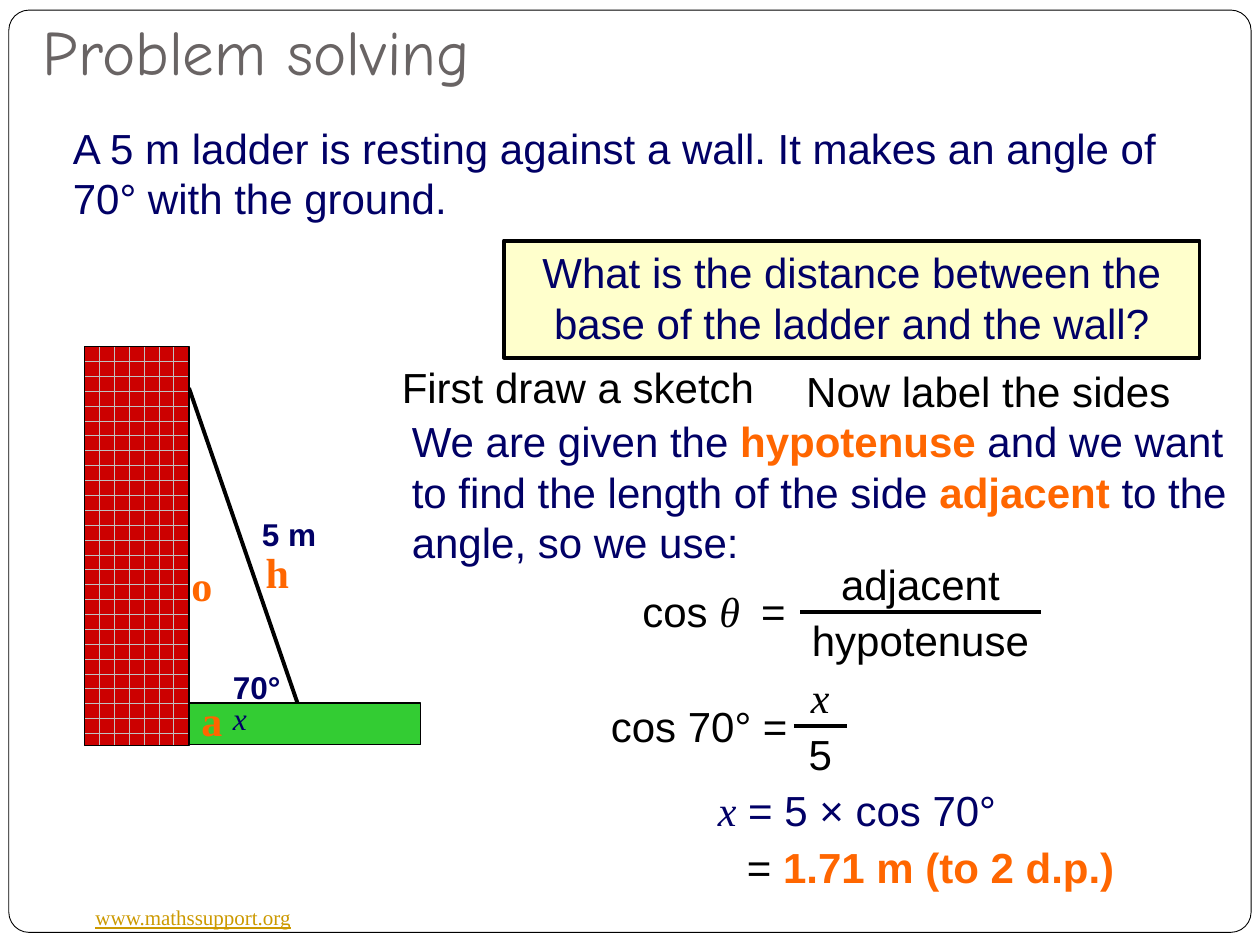
from lxml import etree
from pptx import Presentation
from pptx.dml.color import RGBColor
from pptx.enum import dml, shapes, text
from pptx.oxml import ns
from pptx.util import Inches, Pt

COLOURS = {
    "black": "000000", "white": "FFFFFF", "navy": "010066", "orange": "FF6600",
    "grey": "696464", "gold": "CC9900", "cream": "FFFFCC", "grass": "33CC33",
    "mortar": "C0C0C0", "brick": "CC0000",
}
SANS, SERIF, TITLE = "Arial", "Times New Roman", "Comic Neue"


def colour(name):
    return RGBColor.from_string(COLOURS[name])


def add_run(paragraph, words, size=24, font=SANS, color="black",
            bold=False, italic=False, underline=False):
    run = paragraph.add_run()
    run.text = words
    style = run.font
    style.size, style.name = Pt(size), font
    style.bold, style.italic, style.underline = bold, italic, underline
    style.color.rgb = colour(color)


class SlideBuilder:
    """Holds the current slide and the shared text style."""

    def __init__(self, slide):
        self.slide = slide

    def fill_text(self, frame, runs, align=text.PP_ALIGN.LEFT, wrap=True, **style):
        """Runs are a string, or (words, overrides) pairs on top of the style."""
        frame.word_wrap = wrap
        paragraph = frame.paragraphs[0]
        paragraph.alignment = align
        pairs = [(runs, {})] if isinstance(runs, str) else runs
        for words, overrides in pairs:
            add_run(paragraph, words, **{**style, **overrides})

    def title(self, words, left, top, width, height):
        title = self.slide.shapes.title
        title.left, title.top = Inches(left), Inches(top)
        title.width, title.height = Inches(width), Inches(height)
        frame = title.text_frame
        frame.vertical_anchor = text.MSO_ANCHOR.BOTTOM
        frame.margin_bottom = Inches(0.1)
        self.fill_text(frame, words, size=36, font=TITLE, color="grey")

    def label(self, runs, left, top, width, height=0.5, parent=None, **style):
        box = (parent or self.slide).shapes.add_textbox(
            Inches(left), Inches(top), Inches(width), Inches(height))
        box.text_frame.auto_size = text.MSO_AUTO_SIZE.SHAPE_TO_FIT_TEXT
        self.fill_text(box.text_frame, runs, **style)

    def box(self, left, top, width, height, fill=None, line=0.75,
            kind=shapes.MSO_SHAPE.RECTANGLE):
        box = self.slide.shapes.add_shape(
            kind, Inches(left), Inches(top), Inches(width), Inches(height))
        box.shadow.inherit = False
        if fill:
            box.fill.solid()
            box.fill.fore_color.rgb = colour(fill)
        box.line.color.rgb = colour("black")
        box.line.width = Pt(line)
        return box

    def line(self, x1, y1, x2, y2, parent=None):
        line = (parent or self.slide).shapes.add_connector(
            shapes.MSO_CONNECTOR.STRAIGHT,
            Inches(x1), Inches(y1), Inches(x2), Inches(y2))
        line.line.color.rgb = colour("black")
        line.line.width = Pt(2.25)
        etree.SubElement(line._element.spPr, ns.qn("a:effectLst"))

    def fraction(self, numerator, denominator, left, bar_y, width):
        """Both terms are centred on the bar, in boxes a little wider than it."""
        group = self.slide.shapes.add_group_shape()
        overhang = 0.15
        place = dict(parent=group, align=text.PP_ALIGN.CENTER)
        term_left, term_width = left - overhang, width + 2 * overhang
        self.label(numerator, term_left, bar_y - 0.48, term_width, **place)
        self.line(left, bar_y, left + width, bar_y, parent=group)
        self.label(denominator, term_left, bar_y - 0.03, term_width, **place)


def main():
    prs = Presentation()
    prs.slide_width, prs.slide_height = Inches(10), Inches(7.5)
    page = SlideBuilder(prs.slides.add_slide(prs.slide_layouts[5]))
    math_italic = dict(font=SERIF, italic=True)
    key_word = dict(color="orange", bold=True)

    # Page frame and footer
    frame = page.box(0.07, 0.08, 9.86, 7.32, "white", 0.5,
                     shapes.MSO_SHAPE.ROUNDED_RECTANGLE)
    frame.adjustments[0] = 0.022
    tree = page.slide.shapes._spTree
    tree.remove(frame._element)
    tree.insert(2, frame._element)  # behind the title
    page.label("www.mathssupport.org", 0.66, 7.13, 1.77, 0.3, wrap=False,
               size=12, font=SERIF, color="gold", underline=True)

    # Problem and question
    page.title("Problem solving", 0.24, 0.1, 9, 0.7)
    page.label("A 5 m ladder is resting against a wall. It makes an angle of "
               "70° with the ground.", 0.48, 0.92, 8.85, 0.9, color="navy")
    question = page.box(4, 1.91, 5.52, 0.93, "cream", 2.25)
    question.text_frame.vertical_anchor = text.MSO_ANCHOR.TOP
    page.fill_text(question.text_frame,
                   "What is the distance between the base of the ladder and the wall?",
                   align=text.PP_ALIGN.CENTER, color="navy")

    # Sketch: ladder, ground, wall
    page.line(1.5, 3.08, 2.42, 5.75)
    page.box(1.42, 5.58, 1.92, 0.33, "grass")
    wall = page.box(0.67, 2.75, 0.83, 3.17)
    wall.fill.patterned()
    wall.fill.pattern = dml.MSO_PATTERN.HORIZONTAL_BRICK
    wall.fill.fore_color.rgb = colour("mortar")
    wall.fill.back_color.rgb = colour("brick")

    # Measurements and side names
    for measure, left, top, width, style in (
            ("5 m", 1.98, 4.04, 0.63, dict(bold=True)),
            ("70°", 1.75, 5.25, 0.58, dict(bold=True)),
            ("x", 1.75, 5.5, 0.31, math_italic)):
        page.label(measure, left, top, width, 0.4, wrap=False,
                   size=18, color="navy", **style)
    for side, left, top in (("h", 2.01, 4.29), ("o", 1.42, 4.39), ("a", 1.5, 5.46)):
        page.label(side, left, top, 0.4, wrap=False, font=SERIF, **key_word)

    # Steps
    page.label("First draw a sketch", 3.09, 2.82, 3.42)
    page.label("Now label the sides", 6.3, 2.85, 3.42)
    page.label([("We are given the ", {}), ("hypotenuse", key_word),
                (" and we want to find the length of the side ", {}),
                ("adjacent", key_word), (" to the angle, so we use:", {})],
               3.17, 3.25, 6.83, 1.3, color="navy")

    # Working
    page.label([("cos ", {}), ("θ  ", math_italic), ("=", {})],
               5, 4.6, 1.34, wrap=False)
    page.fraction("adjacent", "hypotenuse", 6.35, 4.86, 1.91)
    page.label("cos 70° =", 4.75, 5.51, 1.6, wrap=False)
    page.fraction([("x", math_italic)], "5", 6.3, 5.76, 0.42)
    page.label([("x", math_italic), (" = 5 × cos 70°", {})],
               5.6, 6.18, 2.6, color="navy")
    page.label([("=", {}), (" 1.71 m (to 2 d.p.)", key_word)],
               5.83, 6.63, 3.4)

    prs.save("out.pptx")


if __name__ == "__main__":
    main()
